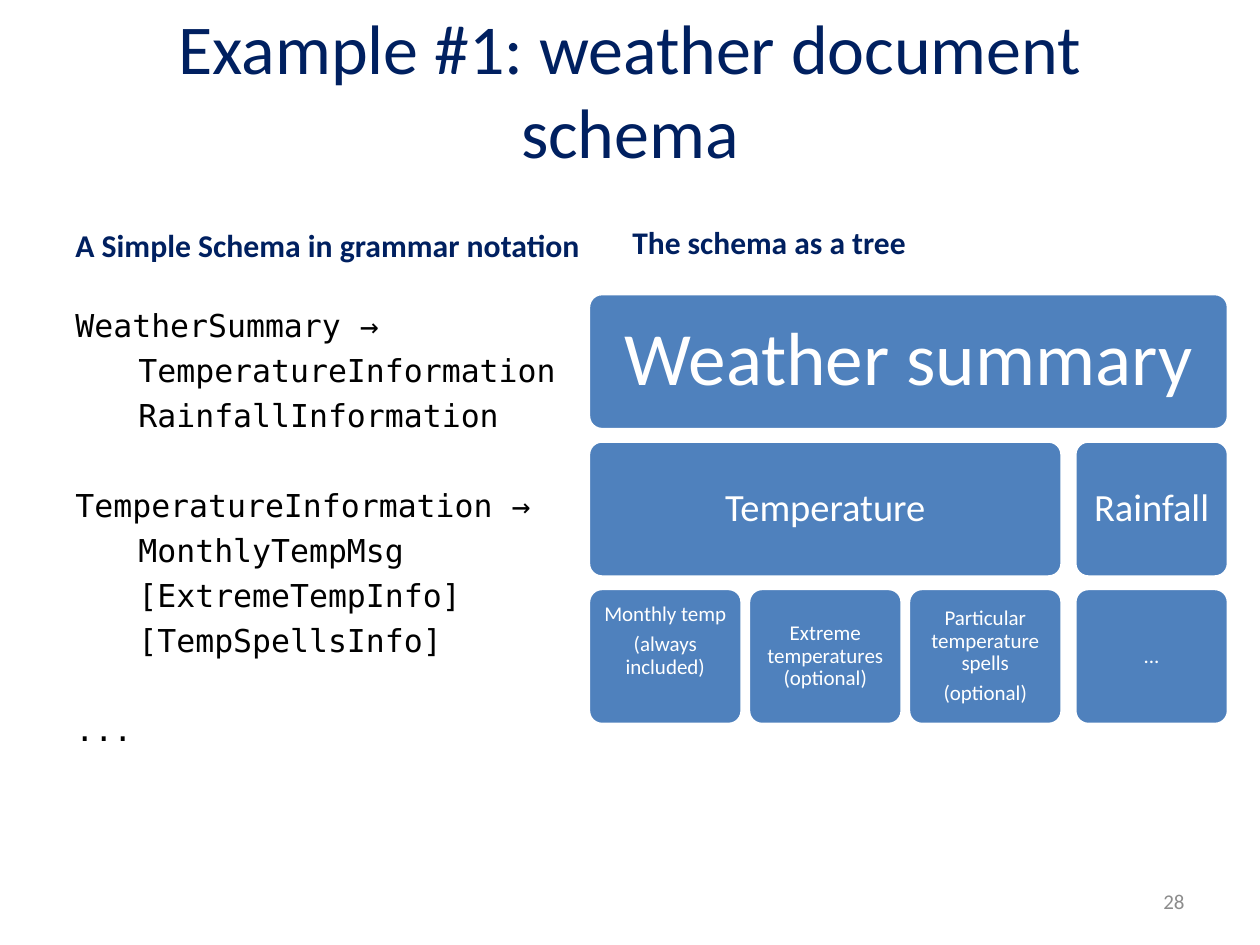
from dataclasses import dataclass

from pptx import Presentation
from pptx.dml.color import RGBColor
from pptx.enum.shapes import MSO_SHAPE
from pptx.enum.text import MSO_ANCHOR, PP_ALIGN
from pptx.util import Inches, Pt

COLORS = {"navy": "002060", "black": "000000", "gray": "8C8C8C",
          "blue": "4F81BD", "white": "FFFFFF"}
SANS, MONO = "Calibri", "DejaVu Sans Mono"

LEFT, TOP = 4.67, 2.33
CELL, HEIGHT = 1.22, 1.08
STEP, ROW = 1.27, 1.17
RAIN = 8.53


@dataclass
class Label:
    text: str
    box: tuple
    size: float
    color: str = "navy"
    bold: bool = False
    align: PP_ALIGN = PP_ALIGN.LEFT
    anchor: MSO_ANCHOR = MSO_ANCHOR.BOTTOM


@dataclass
class Node:
    lines: list
    left: float
    row: int
    width: float = CELL
    size: int = 12
    inset: float = 0.02
    lift: float = 0  # extra bottom margin that raises the text


@dataclass
class Rule:
    head: str
    terms: list


LABELS = [
    Label("Example #1: weather document schema", (0.5, 0.08, 9, 1.25), 40,
          align=PP_ALIGN.CENTER, anchor=MSO_ANCHOR.MIDDLE),
    Label("A Simple Schema in grammar notation", (0.5, 1.68, 4.42, 0.46), 18.1,
          bold=True),
    Label("The schema as a tree", (4.92, 1.42, 4.42, 0.7), 18, bold=True),
    Label("28", (7.17, 6.95, 2.33, 0.4), 12, "gray",
          align=PP_ALIGN.RIGHT, anchor=MSO_ANCHOR.MIDDLE),
]

RULES = [
    Rule("WeatherSummary →", ["TemperatureInformation", "RainfallInformation"]),
    Rule("TemperatureInformation →",
         ["MonthlyTempMsg", "[ExtremeTempInfo]", "[TempSpellsInfo]"]),
    Rule("...", []),
]

NODES = [
    Node(["Weather summary"], LEFT, 0, RAIN + CELL - LEFT, 43, 0.15),
    Node(["Temperature"], LEFT, 1, 2 * STEP + CELL, 22, 0.06),
    Node(["Monthly temp", "(always included)"], LEFT, 2, lift=0.24),
    Node(["Extreme temperatures (optional)"], LEFT + STEP, 2),
    Node(["Particular temperature spells", "(optional)"], LEFT + 2 * STEP, 2),
    Node(["Rainfall"], RAIN, 1, size=22, inset=0.06),
    Node(["..."], RAIN, 2),
]


def rgb(name: str) -> RGBColor:
    return RGBColor.from_string(COLORS[name])


def style(para, size: float, color: str, face: str = SANS, bold: bool = False) -> None:
    font = para.font
    font.name, font.size, font.bold = face, Pt(size), bold
    font.color.rgb = rgb(color)


def add_frame(slide, box: tuple):
    frame = slide.shapes.add_textbox(*map(Inches, box)).text_frame
    frame.word_wrap = True
    return frame


def fill_lines(frame, lines: list) -> list:
    """Put each line in its own paragraph and return the paragraphs."""
    frame.text = "\n".join(lines)
    return list(frame.paragraphs)


def draw_label(slide, label: Label) -> None:
    frame = add_frame(slide, label.box)
    frame.vertical_anchor = label.anchor
    para = fill_lines(frame, [label.text])[0]
    para.alignment = label.align
    style(para, label.size, label.color, bold=label.bold)


def draw_rules(slide, rules: list) -> None:
    frame = add_frame(slide, (0.5, 2.38, 4.08, 4.32))
    lines = [line for rule in rules for line in (rule.head, *rule.terms)]
    heads = {rule.head for rule in rules}
    for i, para in enumerate(fill_lines(frame, lines)):
        style(para, 18, "black", MONO)
        is_head = para.text in heads
        para.space_before = Pt(29.4 if is_head and i else 4.2)
        if not is_head:
            para.level = 1
            props = para._p.get_or_add_pPr()
            props.set("marL", str(Inches(0.5)))
            props.set("indent", "0")


def draw_node(slide, node: Node) -> None:
    box = (node.left, TOP + node.row * ROW, node.width, HEIGHT)
    shape = slide.shapes.add_shape(MSO_SHAPE.ROUNDED_RECTANGLE, *map(Inches, box))
    shape.adjustments[0] = 0.1
    shape.shadow.inherit = False
    shape.fill.solid()
    shape.fill.fore_color.rgb = rgb("blue")
    shape.line.color.rgb = rgb("white")
    shape.line.width = Pt(2)
    frame = shape.text_frame
    frame.word_wrap = True
    frame.vertical_anchor = MSO_ANCHOR.MIDDLE
    frame.margin_left = frame.margin_right = frame.margin_top = Inches(node.inset)
    frame.margin_bottom = Inches(node.inset + node.lift)
    for para in fill_lines(frame, node.lines):
        para.alignment = PP_ALIGN.CENTER
        para.line_spacing = 0.9
        para.space_after = Pt(0.35 * node.size)
        style(para, node.size, "white")


def main() -> None:
    deck = Presentation()
    deck.slide_width, deck.slide_height = Inches(10), Inches(7.5)
    slide = deck.slides.add_slide(deck.slide_layouts[6])
    for label in LABELS:
        draw_label(slide, label)
    draw_rules(slide, RULES)
    for node in NODES:
        draw_node(slide, node)
    deck.save("out.pptx")


if __name__ == "__main__":
    main()
